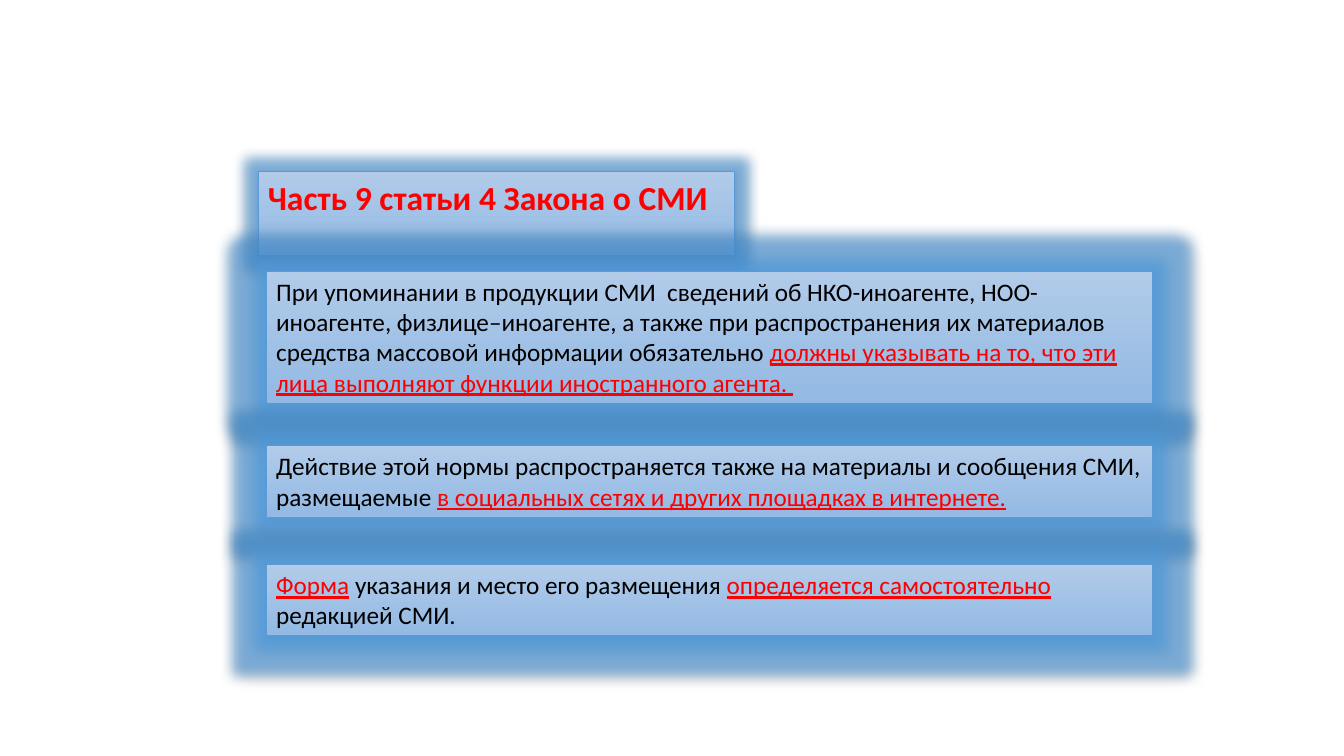
from lxml import etree
from pptx import Presentation
from pptx.dml.color import RGBColor
from pptx.enum import shapes, text
from pptx.oxml import ns
from pptx.util import Cm, Pt

BLACK, RED, BLUE = "000000", "FF0000", "5B9BD5"
FRAME_FORMAT = {
    "word_wrap": True,
    "auto_size": text.MSO_AUTO_SIZE.SHAPE_TO_FIT_TEXT,
    "vertical_anchor": text.MSO_ANCHOR.TOP,
    "margin_left": Cm(0.25),
    "margin_right": Cm(0.25),
    "margin_top": Cm(0.13),
    "margin_bottom": Cm(0.13),
}
PLAIN = {"color": BLACK, "underline": False}
MARKED = {"color": RED, "underline": True}
HEADING = {"color": RED, "underline": False, "bold": True, "size": Pt(24)}

# Left, top, width and height in centimetres
HEADING_BOX = (6.5, 4.32, 12.01, 1.27)
RULES = [
    ((6.71, 6.83, 22.33, 3.33), [
        ("При упоминании в продукции СМИ  сведений об НКО-иноагенте, "
         "НОО-иноагенте, физлице–иноагенте, а также при распространения "
         "их материалов средства массовой информации обязательно ", PLAIN),
        ("должны указывать на то, что эти лица выполняют функции "
         "иностранного агента. ", MARKED),
    ]),
    ((6.71, 11.23, 22.33, 1.8), [
        ("Действие этой нормы распространяется также на материалы и "
         "сообщения СМИ, размещаемые ", PLAIN),
        ("в социальных сетях и других площадках в интернете.", MARKED),
    ]),
    ((6.71, 14.22, 22.33, 1.8), [
        ("Форма", MARKED),
        (" указания и место его размещения ", PLAIN),
        ("определяется самостоятельно ", MARKED),
        ("редакцией СМИ.", PLAIN),
    ]),
]


def rgb(value):
    return RGBColor.from_string(value)


def add_effect(effects, tag, color, alpha, **attributes):
    effect = etree.SubElement(effects, ns.qn(tag), attributes)
    tint = etree.SubElement(effect, ns.qn("a:srgbClr"), val=color)
    etree.SubElement(tint, ns.qn("a:alpha"), val=str(alpha * 1000))


def style_box(box):
    # Gradient and outline
    box.fill.gradient()
    box.fill.gradient_angle = 270
    for stop, color, position in zip(box.fill.gradient_stops, ("B1CBE9", "93B9E4"), (0, 1)):
        stop.color.rgb = rgb(color)
        stop.position = position
    box.line.color.rgb = rgb(BLUE)
    box.line.width = Pt(0.5)

    # Wide blue glow and a soft shadow below
    box.shadow.inherit = False
    effects = box.element.spPr.find(ns.qn("a:effectLst"))
    add_effect(effects, "a:glow", "4A9AE0", 60, rad=str(Pt(18)))
    add_effect(effects, "a:outerShdw", BLACK, 38, blurRad=str(Pt(3.1)),
               dist=str(Pt(1.6)), dir="5400000", rotWithShape="0")


def write_text(box, runs):
    frame = box.text_frame
    for name, value in FRAME_FORMAT.items():
        setattr(frame, name, value)
    paragraph = frame.paragraphs[0]
    paragraph.alignment = text.PP_ALIGN.LEFT
    for words, look in runs:
        run = paragraph.add_run()
        run.text = words
        font = {"name": "Calibri", "size": Pt(18), "bold": False, **look}
        run.font.color.rgb = rgb(font.pop("color"))
        for name, value in font.items():
            setattr(run.font, name, value)


def add_heading(slide, words):
    heading = slide.shapes.title
    for name, value in zip(("left", "top", "width", "height"), HEADING_BOX):
        setattr(heading, name, Cm(value))
    style_box(heading)
    write_text(heading, [(words, HEADING)])


def add_rule(slide, bounds, runs):
    rule = slide.shapes.add_shape(shapes.MSO_SHAPE.RECTANGLE, *map(Cm, bounds))
    style_box(rule)
    write_text(rule, runs)


def main():
    deck = Presentation()
    deck.slide_width, deck.slide_height = Cm(33.87), Cm(19.05)
    slide = deck.slides.add_slide(deck.slide_layouts[5])

    add_heading(slide, "Часть 9 статьи 4 Закона о СМИ")
    for bounds, runs in RULES:
        add_rule(slide, bounds, runs)

    deck.save("out.pptx")


if __name__ == "__main__":
    main()
